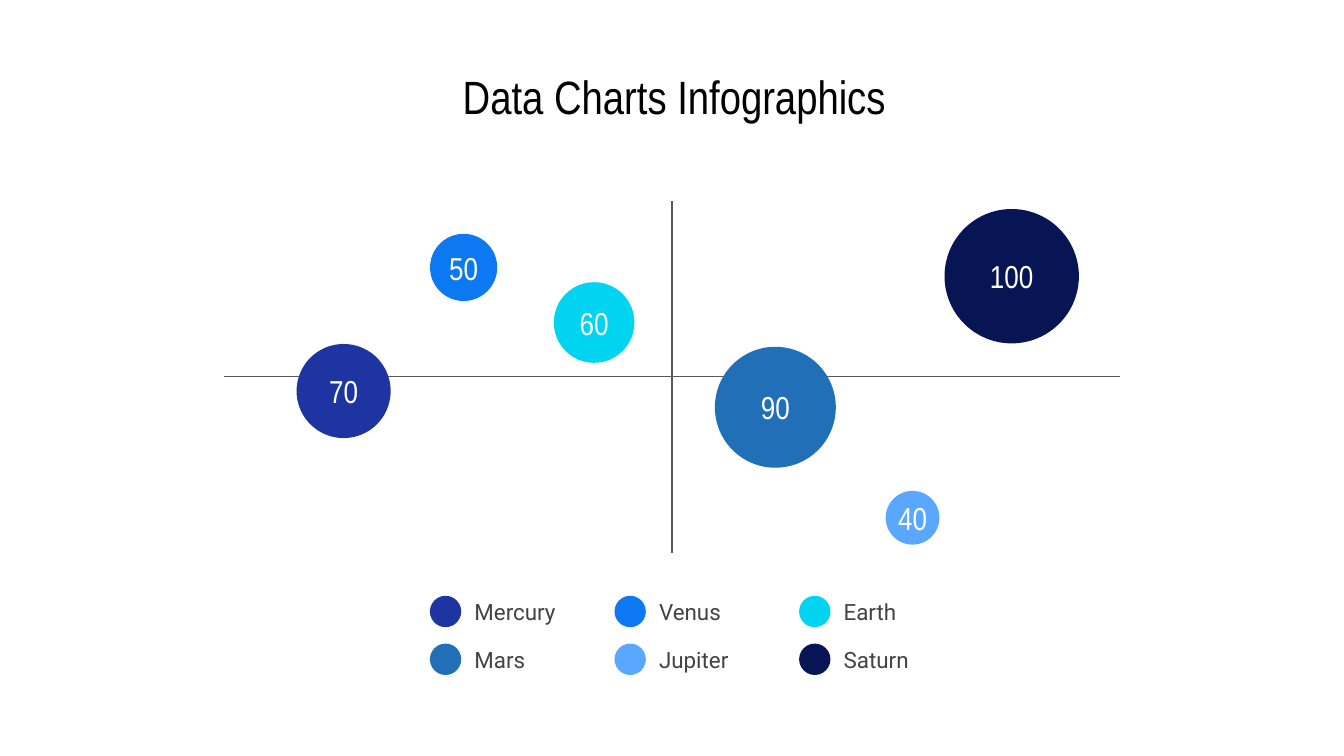
from lxml.etree import SubElement
from pptx import Presentation
from pptx.dml.color import RGBColor
from pptx.enum.shapes import MSO_CONNECTOR, MSO_SHAPE
from pptx.enum.text import MSO_ANCHOR, MSO_AUTO_SIZE, PP_ALIGN
from pptx.oxml.ns import qn
from pptx.util import Pt

BLACK = RGBColor(0x00, 0x00, 0x00)
WHITE = RGBColor(0xFF, 0xFF, 0xFF)
AXIS_GREY = RGBColor(0x59, 0x59, 0x59)
TEXT_GREY = RGBColor(0x43, 0x43, 0x43)

# Planet: colour, value, bubble centre x and y, in legend order
PLANETS = {
    "Mercury": (RGBColor(0x1E, 0x35, 0xA1), 70, 184.1, 209.5),
    "Venus": (RGBColor(0x0C, 0x79, 0xF3), 50, 248.4, 143.3),
    "Earth": (RGBColor(0x00, 0xD4, 0xF0), 60, 318.3, 172.8),
    "Mars": (RGBColor(0x21, 0x70, 0xB7), 90, 415.4, 218.2),
    "Jupiter": (RGBColor(0x59, 0xA7, 0xFF), 40, 488.9, 277.4),
    "Saturn": (RGBColor(0x07, 0x15, 0x54), 100, 542, 148),
}


def write(sp, text, font, size, color, align, side=7.2):
    tf = sp.text_frame
    settings = {"word_wrap": True, "auto_size": MSO_AUTO_SIZE.NONE,
                "vertical_anchor": MSO_ANCHOR.MIDDLE,
                "margin_left": Pt(side), "margin_right": Pt(side),
                "margin_top": Pt(7.2), "margin_bottom": Pt(7.2)}
    for name, value in settings.items():
        setattr(tf, name, value)
    p = tf.paragraphs[0]
    p.alignment = align
    r = p.add_run()
    r.text = text
    for name, value in {"name": font, "size": Pt(size), "bold": False}.items():
        setattr(r.font, name, value)
    r.font.color.rgb = color


def add_circle(group, x, y, diameter, color):
    sp = group.shapes.add_shape(MSO_SHAPE.OVAL, Pt(x), Pt(y), Pt(diameter), Pt(diameter))
    sp.shadow.inherit = False
    sp.fill.solid()
    sp.fill.fore_color.rgb = color
    sp.line.fill.background()
    return sp


prs = Presentation()
prs.slide_width, prs.slide_height = Pt(720), Pt(405)
s = prs.slides.add_slide(prs.slide_layouts[5])

# Title
title = s.shapes.title
box = {"left": 38.2, "top": 32.4, "width": 645.8, "height": 38.2}
for name, value in box.items():
    setattr(title, name, Pt(value))
write(title, "Data Charts Infographics", "Arial Narrow", 25, BLACK, PP_ALIGN.CENTER)

# Crossing axes
axes = s.shapes.add_group_shape()
for x1, y1, x2, y2 in ((360, 107.6, 360, 296), (600, 201.8, 120, 201.8)):
    line = axes.shapes.add_connector(MSO_CONNECTOR.STRAIGHT, Pt(x1), Pt(y1), Pt(x2), Pt(y2))
    line.line.color.rgb = AXIS_GREY
    line.line.width = Pt(0.75)
    SubElement(line.element.spPr, qn("a:effectLst"))

# Bubbles, whose diameter is proportional to the value
bubbles = s.shapes.add_group_shape()
for color, value, x, y in PLANETS.values():
    d = 0.72 * value
    sp = add_circle(bubbles, x - d / 2, y - d / 2, d, color)
    write(sp, str(value), "Arial Narrow", 17, WHITE, PP_ALIGN.CENTER, side=0)

# Legend in two rows of three
legend = s.shapes.add_group_shape()
DOT = 16.8
for i, (planet, (color, *_)) in enumerate(PLANETS.items()):
    row, col = divmod(i, 3)
    x, y = 230.3 + 98.9 * col, 319.2 + 25.6 * row
    label = legend.shapes.add_textbox(Pt(x + DOT), Pt(y + 0.4), Pt(62.6), Pt(16))
    write(label, planet, "Roboto", 12, TEXT_GREY, PP_ALIGN.LEFT)
    add_circle(legend, x, y, DOT, color)

prs.save("out.pptx")
